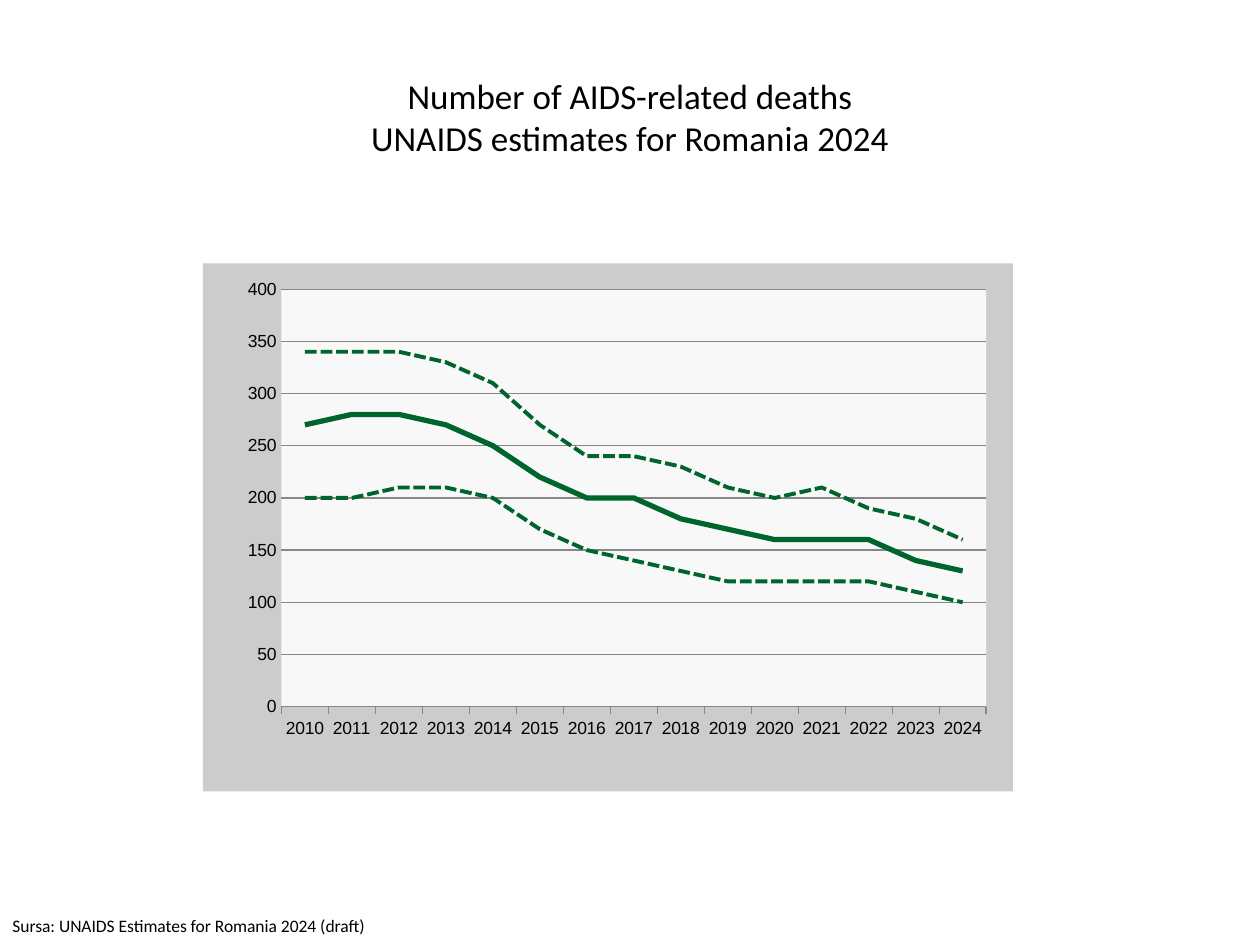
from lxml import etree
from pptx import Presentation
from pptx.chart.data import CategoryChartData
from pptx.dml.color import RGBColor
from pptx.enum.chart import XL_CHART_TYPE, XL_MARKER_STYLE, XL_TICK_MARK
from pptx.enum.dml import MSO_LINE
from pptx.enum.text import MSO_ANCHOR, PP_ALIGN
from pptx.oxml import parse_xml
from pptx.oxml.ns import nsdecls, qn
from pptx.util import Inches, Pt

LINE = XL_CHART_TYPE.LINE
NO_MARKER = XL_MARKER_STYLE.NONE
NO_TICK, TICK_OUT = XL_TICK_MARK.NONE, XL_TICK_MARK.OUTSIDE
DASH, SOLID = MSO_LINE.SQUARE_DOT, MSO_LINE.SOLID
MIDDLE, CENTER = MSO_ANCHOR.MIDDLE, PP_ALIGN.CENTER
GREEN, GREY, BLACK = "00642D", "878787", "000000"


def rgb(value):
    return RGBColor.from_string(value)


def area_fill(value):
    return parse_xml(
        f'<c:spPr {nsdecls("c", "a")}><a:solidFill><a:srgbClr val="{value}"/></a:solidFill>'
        '<a:ln><a:noFill/></a:ln></c:spPr>'
    )


prs = Presentation()
prs.slide_width, prs.slide_height = Inches(10), Inches(7.5)
W, H = prs.slide_width, prs.slide_height
s = prs.slides.add_slide(prs.slide_layouts[5])

title = s.shapes.title
title.left, title.top = int(W * 0.05), int(H * 0.04)
title.width, title.height = int(W * 0.9), Inches(1.25)
title.text_frame.vertical_anchor = MIDDLE
title.text_frame.text = "Number of AIDS-related deaths\vUNAIDS estimates for Romania 2024"
title.text_frame.paragraphs[0].alignment = CENTER

source = s.shapes.add_textbox(0, Inches(7.21), Inches(3.27), Inches(0.27))
source.text_frame.word_wrap = True
source.text_frame.text = "Sursa: UNAIDS Estimates for Romania 2024 (draft)"

for sp, size in ((title, 20), (source, 10)):
    p = sp.text_frame.paragraphs[0]
    p.font.size, p.font.name = Pt(size), "Calibri"
    p.font.color.rgb = rgb(BLACK)

estimate = [270, 280, 280, 270, 250, 220, 200, 200, 180, 170, 160, 160, 160, 140, 130]
low = [200, 200, 210, 210, 200, 170, 150, 140, 130, 120, 120, 120, 120, 110, 100]
high = [340, 340, 340, 330, 310, 270, 240, 240, 230, 210, 200, 210, 190, 180, 160]

data = CategoryChartData()
data.categories = [str(year) for year in range(2010, 2025)]
for number, values in enumerate((estimate, low, high), 1):
    data.add_series(f"Series {number}", values)

chart = s.shapes.add_chart(
    LINE, Inches(1.61), Inches(2.09), Inches(6.43), Inches(4.19), data
).chart
chart.has_title = False
chart.has_legend = False
chart.font.size, chart.font.name = Pt(10), "Arial"
chart.font.color.rgb = rgb(BLACK)

styles = [(3, SOLID), (2.25, DASH), (2.25, DASH)]
for series, (width, dash) in zip(chart.plots[0].series, styles):
    series.smooth = False
    series.marker.style = NO_MARKER
    line = series.format.line
    line.color.rgb = rgb(GREEN)
    line.width = Pt(width)
    line.dash_style = dash

years, deaths = chart.category_axis, chart.value_axis
years.major_tick_mark = TICK_OUT
years.has_major_gridlines = False
deaths.minimum_scale, deaths.maximum_scale, deaths.major_unit = 0, 400, 50
deaths.major_tick_mark = NO_TICK
deaths.has_major_gridlines = True
deaths.tick_labels.number_format = "#,##0"
deaths.tick_labels.number_format_is_linked = False
deaths.format.line.fill.background()
for line in (years.format.line, deaths.major_gridlines.format.line):
    line.color.rgb = rgb(GREY)
    line.width = Pt(0.75)

chart_part = chart.element.find(qn("c:chart"))
chart_part.addnext(area_fill("CCCCCC"))
plot_area = chart_part.find(qn("c:plotArea"))
plot_area.append(area_fill("F8F8F8"))
for old in plot_area.findall(qn("c:layout")):
    plot_area.remove(old)
layout = etree.Element(qn("c:layout"))
plot_area.insert(0, layout)
manual = etree.SubElement(layout, qn("c:manualLayout"))
settings = [("layoutTarget", "inner"), ("xMode", "edge"), ("yMode", "edge"),
            ("x", "0.097"), ("y", "0.049"), ("w", "0.87"), ("h", "0.791")]
for tag, value in settings:
    etree.SubElement(manual, qn(f"c:{tag}")).set("val", value)

prs.save("out.pptx")
